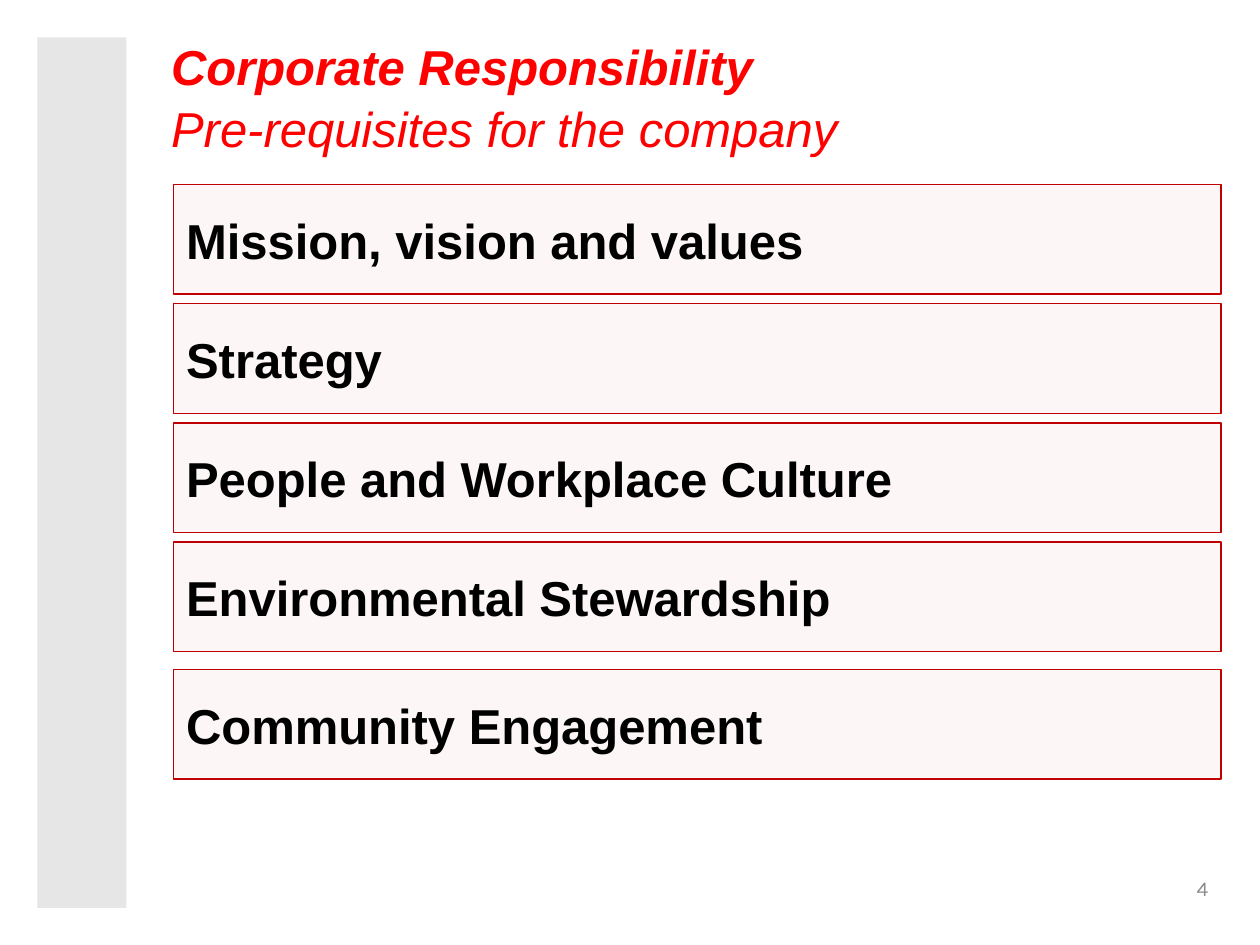
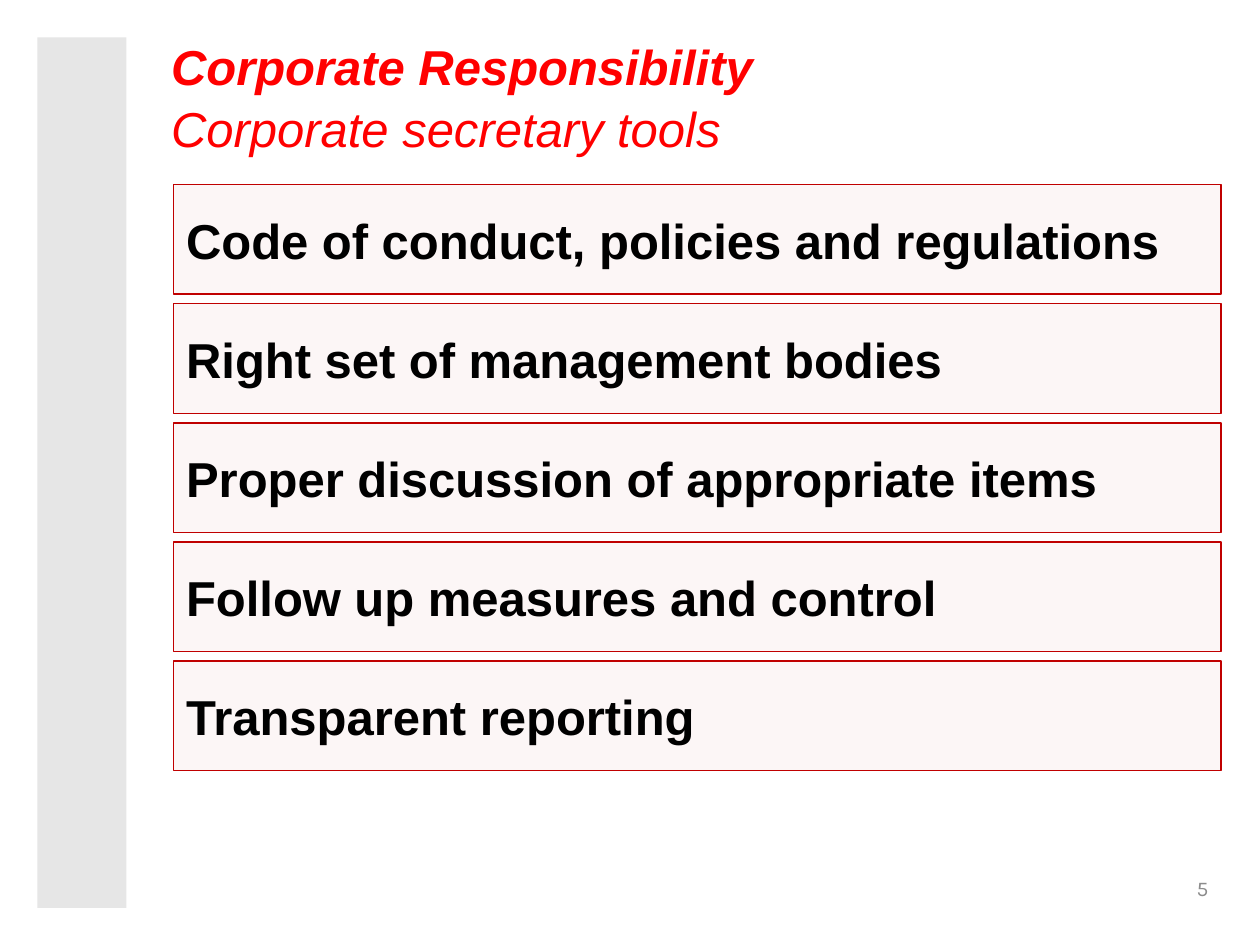
from pptx import Presentation
from pptx.dml.color import RGBColor
from pptx.enum.shapes import MSO_SHAPE
from pptx.enum.text import MSO_ANCHOR, PP_ALIGN
from pptx.util import Pt

RED = RGBColor(0xFF, 0x00, 0x00)
EDGE = RGBColor(0xC0, 0x00, 0x00)
PALE = RGBColor(0xFC, 0xF6, 0xF6)
BAND = RGBColor(0xE6, 0xE6, 0xE6)
GREY = RGBColor(0x8C, 0x8C, 0x8C)
BLACK = RGBColor(0x00, 0x00, 0x00)
RECT = MSO_SHAPE.RECTANGLE
TOP, MIDDLE = MSO_ANCHOR.TOP, MSO_ANCHOR.MIDDLE
LEFT, RIGHT = PP_ALIGN.LEFT, PP_ALIGN.RIGHT

BAND_BOX = (21.3, 21.3, 51, 497.5)
TITLE_BOX = (90.7, 15.1, 629.3, 73.4)
PAGE_BOX = (663.8, 493.2, 33.8, 28.8)
LIST_BOX = (99.3, 105.6, 598.5, 334.6)
ROW = 62.5
STEP = (LIST_BOX[3] - ROW) / 4

TOPIC = "Corporate Responsibility"
SLIDES = [
    (4, "Pre-requisites for the company", 5,
     ["Mission, vision and values", "Strategy", "People and Workplace Culture",
      "Environmental Stewardship", "Community Engagement"]),
    (5, "Corporate secretary tools", 0,
     ["Code of conduct, policies and regulations",
      "Right set of management bodies",
      "Proper discussion of appropriate items",
      "Follow up measures and control", "Transparent reporting"]),
]


def add_rect(slide, box, fill, edge=None):
    rect = slide.shapes.add_shape(RECT, *map(Pt, box))
    rect.shadow.inherit = False
    rect.fill.solid()
    rect.fill.fore_color.rgb = fill
    if edge is None:
        rect.line.fill.background()
    else:
        rect.line.color.rgb = edge
        rect.line.width = Pt(0.75)
    return rect


def write(shape, lines, color, size=28, face="Arial", italic=False,
          align=LEFT, anchor=MIDDLE):
    frame = shape.text_frame
    frame.word_wrap = True
    frame.vertical_anchor = anchor
    frame.text = "\n".join(text for text, bold in lines)
    for para, (text, bold) in zip(frame.paragraphs, lines):
        para.alignment = align
        font = para.font
        font.name, font.size = face, Pt(size)
        font.bold, font.italic = bold, italic
        font.color.rgb = color
    return frame


def add_title(slide, box, name):
    title = slide.shapes.add_textbox(*map(Pt, box))
    frame = write(title, [(TOPIC, True), (name, False)], RED,
                  italic=True, anchor=TOP)
    frame.margin_top = Pt(4)
    for para in frame.paragraphs:
        para.line_spacing = 1.05


def add_page(slide, box, page):
    label = slide.shapes.add_textbox(*map(Pt, box))
    write(label, [(str(page), False)], GREY, 12, "Karla", align=RIGHT)


def add_list(slide, box, items, drop):
    left, top, width, height = box
    for i, item in enumerate(items):
        shift = drop if i == len(items) - 1 else 0
        row = (left, top + i * STEP + shift, width, ROW)
        write(add_rect(slide, row, PALE, EDGE), [(item, True)], BLACK)


def add_slide(deck, page, name, drop, items):
    slide = deck.slides.add_slide(deck.slide_layouts[6])
    add_rect(slide, BAND_BOX, BAND)
    add_title(slide, TITLE_BOX, name)
    add_page(slide, PAGE_BOX, page)
    add_list(slide, LIST_BOX, items, drop)


def main():
    deck = Presentation()
    deck.slide_width, deck.slide_height = Pt(720), Pt(540)
    for entry in SLIDES:
        add_slide(deck, *entry)
    deck.save("out.pptx")


if __name__ == "__main__":
    main()
